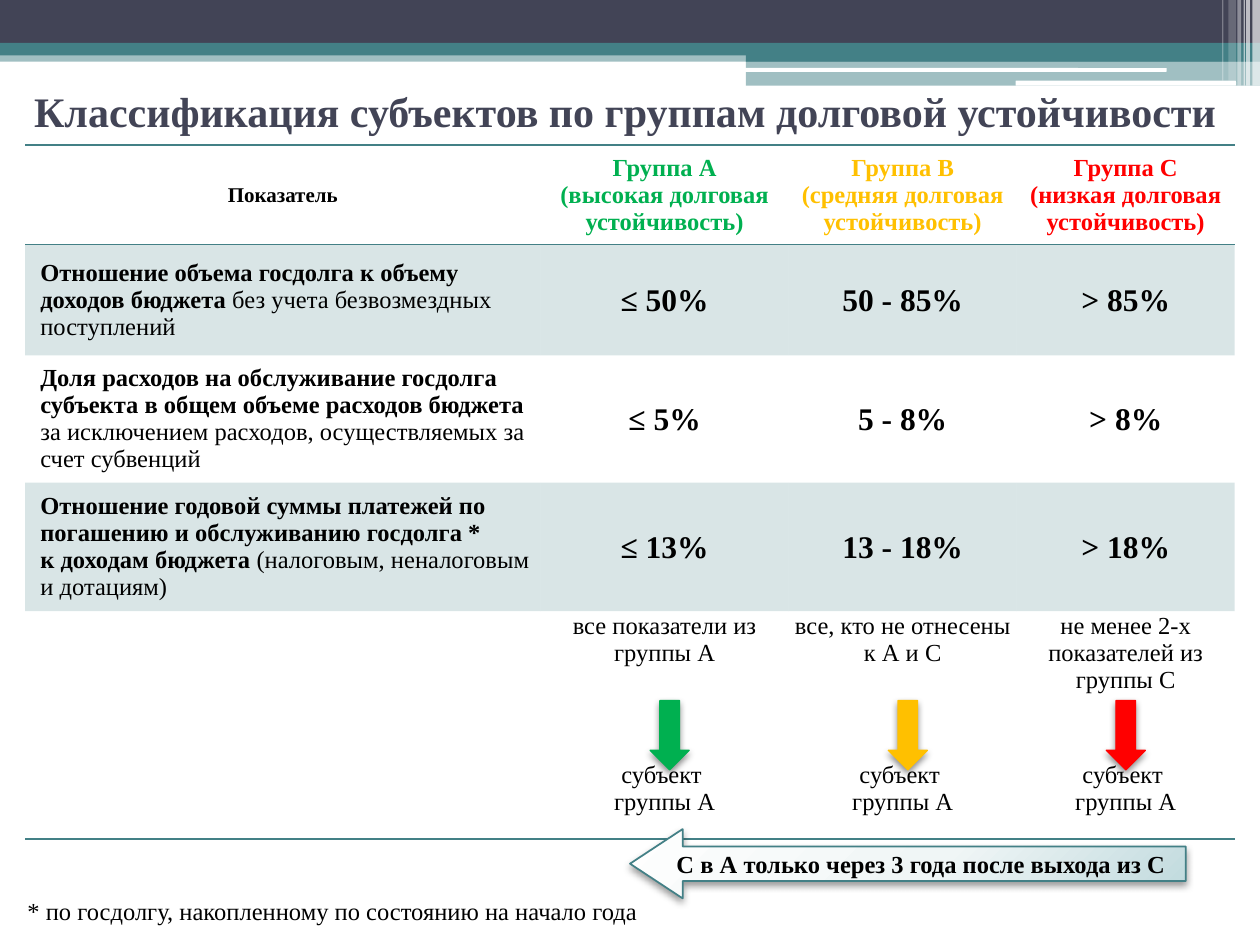
import dataclasses

import lxml.etree
import pptx
import pptx.dml.color
import pptx.enum.shapes
import pptx.enum.text
import pptx.oxml.ns
import pptx.util

Inches = pptx.util.Inches
Pt = pptx.util.Pt
Shape = pptx.enum.shapes.MSO_SHAPE
Align = pptx.enum.text.PP_ALIGN
Anchor = pptx.enum.text.MSO_ANCHOR


@dataclasses.dataclass(frozen=True)
class Theme:
    font: str = "Times New Roman"
    dark: str = "424456"
    teal: str = "438086"
    white: str = "FFFFFF"
    black: str = "000000"
    green: str = "00B050"
    amber: str = "FFC000"
    red: str = "FF0000"
    gradient: tuple = ((0, "FEFEFE"), (55, "F0F6F6"), (100, "BFD9DD"))
    title_size: int = 24
    value_size: int = 18
    body_size: int = 14
    label_size: int = 12
    plain_table: str = "{2D5ABB26-0587-4C30-8999-92F81FD0307C}"


def add_element(parent, tag, **attributes):
    element = lxml.etree.SubElement(parent, pptx.oxml.ns.qn(tag))
    for name, value in attributes.items():
        element.set(name, str(value))
    return element


class SlideBuilder:
    """Draws styled elements on the current slide."""

    def __init__(self, slide, theme):
        self.slide = slide
        self.theme = theme

    def paint(self, fill, color, alpha=100):
        fill.solid()
        fill.fore_color.rgb = pptx.dml.color.RGBColor.from_string(color)
        if alpha < 100:
            color_element = fill._xPr.find(".//" + pptx.oxml.ns.qn("a:srgbClr"))
            add_element(color_element, "a:alpha", val=alpha * 1000)

    def add_runs(self, paragraph, pieces, size, color, align):
        paragraph.alignment = align
        for text, bold in pieces:
            run = paragraph.add_run()
            run.text = text
            run.font.name = self.theme.font
            run.font.size = Pt(size)
            run.font.bold = bold
            run.font.color.rgb = pptx.dml.color.RGBColor.from_string(color)

    def shape(self, kind, box, color, alpha=100, line=None, width=1):
        shape = self.slide.shapes.add_shape(kind, *map(Inches, box))
        shape.shadow.inherit = False
        self.paint(shape.fill, color, alpha)
        if line:
            self.paint(shape.line.fill, line)
            shape.line.width = Pt(width)
        else:
            shape.line.fill.background()
        return shape

    def shadow(self, shape, alpha, blur):
        effects = shape._element.spPr.find(pptx.oxml.ns.qn("a:effectLst"))
        outer = add_element(effects, "a:outerShdw", blurRad=Pt(blur), dist=Pt(2), dir=5400000, rotWithShape=0)
        color = add_element(outer, "a:srgbClr", val=self.theme.black)
        add_element(color, "a:alpha", val=alpha * 1000)

    def radial_fill(self, shape):
        properties = shape._element.spPr
        solid = properties.find(pptx.oxml.ns.qn("a:solidFill"))
        gradient = add_element(properties, "a:gradFill", rotWithShape=1)
        stops = add_element(gradient, "a:gsLst")
        for position, color in self.theme.gradient:
            stop = add_element(stops, "a:gs", pos=position * 1000)
            add_element(stop, "a:srgbClr", val=color)
        circle = add_element(gradient, "a:path")
        circle.set("path", "circle")
        add_element(circle, "a:fillToRect", l=-40000, t=-90000, r=140000, b=190000)
        properties.replace(solid, gradient)

    def down_arrow(self, left, color):
        arrow = self.shape(Shape.DOWN_ARROW, (left, 5.56, 0.31, 0.55), color, line=color, width=0.75)
        self.shadow(arrow, 45, 4)

    def banner_arrow(self, box, text):
        arrow = self.shape(Shape.LEFT_ARROW, box, self.theme.white, line=self.theme.teal)
        arrow.adjustments[1] = 0.76
        self.radial_fill(arrow)
        self.shadow(arrow, 40, 4.1)
        arrow.text_frame.vertical_anchor = Anchor.MIDDLE
        paragraph = arrow.text_frame.paragraphs[0]
        self.add_runs(paragraph, [(text, True)], self.theme.body_size, self.theme.black, Align.CENTER)

    def text(self, box, text, size, color, bold=False, align=Align.LEFT, anchor=Anchor.TOP):
        frame = self.slide.shapes.add_textbox(*map(Inches, box)).text_frame
        frame.word_wrap = True
        frame.vertical_anchor = anchor
        self.add_runs(frame.paragraphs[0], [(text, bold)], size, color, align)

    def table(self, left, top, columns, rows):
        box = map(Inches, (left, top, sum(columns), sum(rows)))
        table = self.slide.shapes.add_table(len(rows), len(columns), *box).table
        table.first_row = table.horz_banding = False
        table._tbl.tblPr.find(pptx.oxml.ns.qn("a:tableStyleId")).text = self.theme.plain_table
        for column, width in zip(table.columns, columns):
            column.width = Inches(width)
        for row, height in zip(table.rows, rows):
            row.height = Inches(height)
        return table

    def cell(self, cell, paragraphs, size, color, align=Align.CENTER, anchor=Anchor.MIDDLE,
             borders=(), shaded=False, gaps=None):
        margin = Inches(0.01 if align == Align.CENTER else 0)
        cell.margin_left = cell.margin_right = cell.margin_top = margin
        cell.margin_bottom = 0
        cell.vertical_anchor = anchor
        for edge in borders:
            border = add_element(cell._tc.get_or_add_tcPr(), edge, w=Pt(1))
            add_element(add_element(border, "a:solidFill"), "a:srgbClr", val=self.theme.teal)
        if shaded:
            self.paint(cell.fill, self.theme.teal, 20)
        else:
            cell.fill.background()
        for index, pieces in enumerate(paragraphs):
            paragraph = cell.text_frame.paragraphs[0] if index == 0 else cell.text_frame.add_paragraph()
            self.add_runs(paragraph, pieces, size, color, align)
            if align == Align.LEFT:
                properties = paragraph._p.get_or_add_pPr()
                properties.set("marL", str(Inches(0.12)))
                properties.set("indent", "0")
            if gaps:
                paragraph.space_before = Pt(gaps[index])


def draw_header_band(builder, theme):
    for box, color, alpha in (
        ((0, 0.4, 10, 0.09), theme.teal, 50),
        ((0, 0, 10, 0.34), theme.dark, 100),
        ((0, 0.34, 10, 0.1), theme.teal, 100),
        ((5.92, 0.39, 4.08, 0.1), theme.teal, 100),
        ((5.92, 0.48, 4.08, 0.2), theme.teal, 50),
    ):
        builder.shape(Shape.RECTANGLE, box, color, alpha)
    for box in ((5.91, 0.54, 3.35, 0.03), (8.06, 0.64, 1.75, 0.04)):
        builder.shape(Shape.ROUNDED_RECTANGLE, box, theme.white)
    for left, width, height, alpha in (
        (9.94, 0.06, 0.68, 65), (9.89, 0.03, 0.68, 65), (9.87, 0.01, 0.68, 60),
        (9.82, 0.03, 0.68, 40), (9.75, 0.06, 0.64, 20), (9.7, 0.01, 0.64, 30),
    ):
        builder.shape(Shape.RECTANGLE, (left, 0, width, height), theme.white, alpha)


def draw_group_table(builder, theme):
    groups = (
        ("Группа А", "(высокая долговая устойчивость)", theme.green, "все показатели из группы А", 54.25),
        ("Группа В", "(средняя долговая устойчивость)", theme.amber, "все, кто не отнесены к А и С", 54.25),
        ("Группа С", "(низкая долговая устойчивость)", theme.red, "не менее 2-х показателей из группы С", 38.75),
    )
    indicators = (
        ([[("Отношение объема госдолга к объему доходов бюджета ", True),
           ("без учета безвозмездных поступлений", False)]], ("≤ 50%", "50 - 85%", "> 85%")),
        ([[("Доля расходов на обслуживание госдолга субъекта в общем объеме расходов бюджета ", True),
           ("за исключением расходов, осуществляемых за счет субвенций", False)]], ("≤ 5%", "5 - 8%", "> 8%")),
        ([[("Отношение годовой суммы платежей по погашению и обслуживанию госдолга *", True)],
          [("к доходам бюджета ", True), ("(налоговым, неналоговым и дотациям)", False)]],
         ("≤ 13%", "13 - 18%", "> 18%")),
    )
    table = builder.table(0.2, 1.15, (4.09, 1.97, 1.81, 1.73), (0.79, 0.88, 1.01, 1.02, 1.81))
    edges = ("a:lnT", "a:lnB")
    builder.cell(table.cell(0, 0), [[("Показатель", True)]], theme.label_size, theme.black, borders=edges)
    builder.cell(table.cell(4, 0), [], theme.body_size, theme.black, borders=edges[1:])
    for column, (name, level, color, rule, gap) in enumerate(groups, 1):
        builder.cell(table.cell(0, column), [[(name, True)], [(level, True)]], theme.body_size, color, borders=edges)
        outcome = [[(text, False)] for text in (rule, "субъект ", "группы А")]
        builder.cell(table.cell(4, column), outcome, theme.body_size, theme.black,
                     anchor=Anchor.TOP, borders=edges[1:], gaps=(0, gap, 0))
    for row, (description, values) in enumerate(indicators, 1):
        shaded = row % 2 == 1
        builder.cell(table.cell(row, 0), description, theme.body_size, theme.black, align=Align.LEFT, shaded=shaded)
        for column, value in enumerate(values, 1):
            builder.cell(table.cell(row, column), [[(value, True)]], theme.value_size, theme.black, shaded=shaded)


def main():
    theme = Theme()
    presentation = pptx.Presentation()
    presentation.slide_width, presentation.slide_height = Inches(10), Inches(7.5)
    builder = SlideBuilder(presentation.slides.add_slide(presentation.slide_layouts[6]), theme)
    draw_header_band(builder, theme)
    builder.text((0, 0.6, 9.92, 0.55), "Классификация субъектов по группам долговой устойчивости",
                 theme.title_size, theme.dark, True, Align.CENTER, Anchor.MIDDLE)
    draw_group_table(builder, theme)
    for left, color in ((5.16, theme.green), (7.05, theme.amber), (8.78, theme.red)):
        builder.down_arrow(left, color)
    builder.banner_arrow((5, 6.58, 4.41, 0.55), "С в А только через 3 года после выхода из С")
    builder.text((0.12, 7.06, 5.2, 0.34), "* по госдолгу, накопленному по состоянию на начало года",
                 theme.body_size, theme.black)
    presentation.save("out.pptx")


if __name__ == "__main__":
    main()
